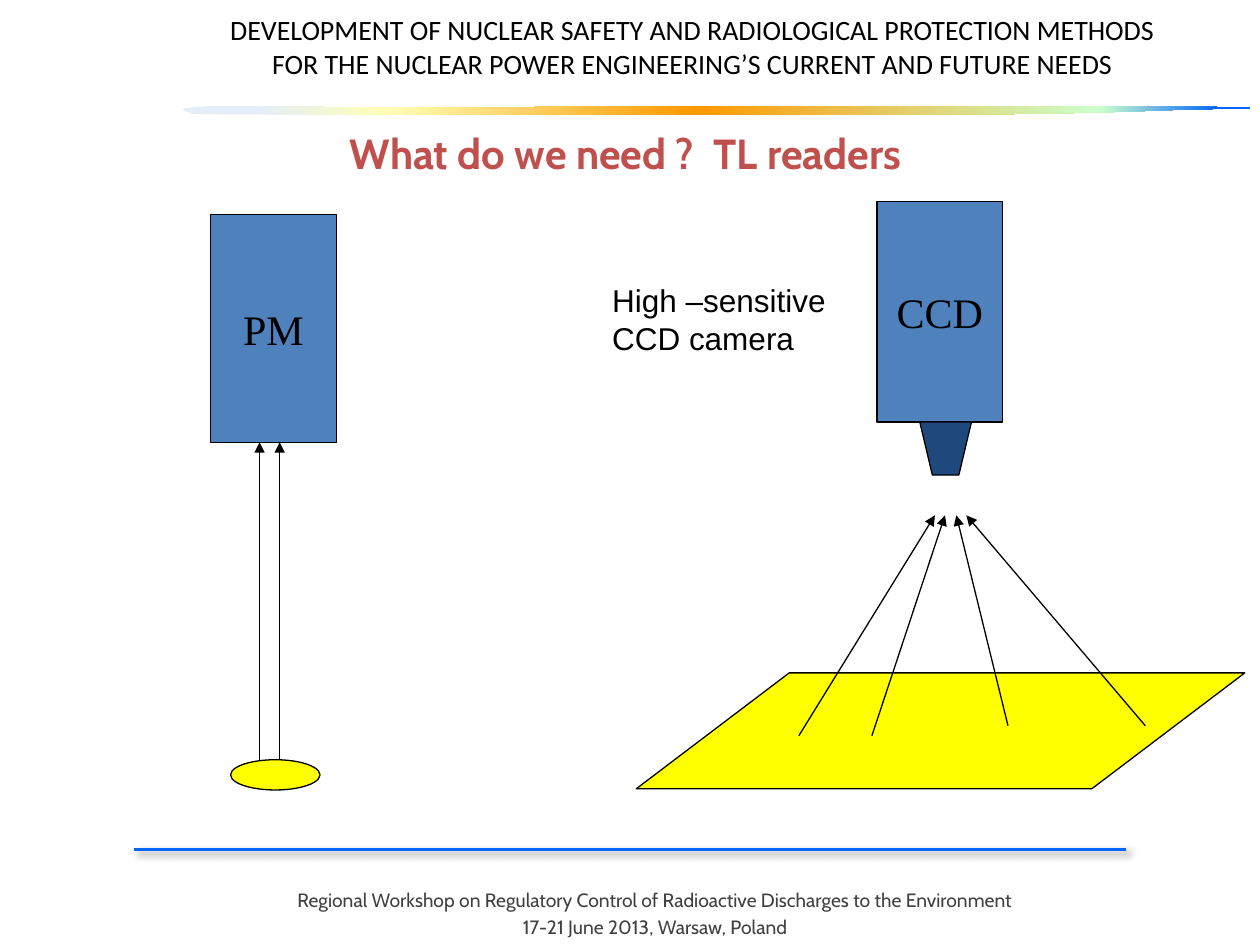
import dataclasses

import pptx
import pptx.dml.color
import pptx.enum.shapes
import pptx.enum.text
import pptx.oxml
import pptx.oxml.ns
import pptx.util
from lxml import etree

Inches = pptx.util.Inches
Pt = pptx.util.Pt
SHAPE = pptx.enum.shapes.MSO_SHAPE
ALIGN = pptx.enum.text.PP_ALIGN
ANCHOR = pptx.enum.text.MSO_ANCHOR
qn = pptx.oxml.ns.qn


@dataclasses.dataclass(frozen=True)
class Theme:
    black: str = "000000"
    yellow: str = "FFFF00"
    body: str = "4F81BD"
    lens: str = "1F497D"
    title: str = "C0504D"
    foot: str = "404040"
    rule: str = "0066FF"
    band: tuple = ((7, "E4EDF8"), (19, "FFFFB7"), (48, "FF9900"),
                   (86, "CCFFCC"), (97, "0066FF"))
    head_size: int = 16
    big_size: int = 24
    note_size: int = 18
    foot_size: int = 11
    thin: float = 0.75
    thick: float = 1.5


THEME = Theme()

# Each curve is two controls and an end; a lone point is a straight line.
SWOOSH_START = (9.4, 0.87)
SWOOSH = [
    ((9.78, 0.86), (10.12, 0.86), (9.78, 0.85)),
    ((8.45, 0.84), (5.47, 0.84), (4.12, 0.85)),
    ((2.78, 0.85),),
    ((2.4, 0.85), (1.89, 0.84), (1.7, 0.84)),
    ((1.34, 0.86), (1.46, 0.87), (1.51, 0.9)),
    ((1.44, 0.91), (2.54, 0.91), (3.55, 0.91)),
    ((4.54, 0.9), (6.69, 0.92), (7.5, 0.91)),
    ((8.83, 0.9), (9.02, 0.88), (9.4, 0.87)),
]


def color(code):
    return pptx.dml.color.RGBColor.from_string(code)


def paint(shape, fill):
    shape.shadow.inherit = False
    shape.fill.solid()
    shape.fill.fore_color.rgb = color(fill)
    shape.line.color.rgb = color(THEME.black)
    shape.line.width = Pt(THEME.thin)


def write(frame, lines, size, font, ink, align=ALIGN.CENTER, bold=False, gap=0):
    frame.text = "\n".join(lines)
    for i, para in enumerate(frame.paragraphs):
        para.alignment = align
        para.space_before = Pt(gap if i else 0)
        para.font.size = Pt(size)
        para.font.name = font
        para.font.bold = bold
        para.font.color.rgb = color(ink)


def add_text(slide, box, lines, *style, wrap=True, **more):
    shape = slide.shapes.add_textbox(*map(Inches, box))
    shape.text_frame.word_wrap = wrap
    write(shape.text_frame, lines, *style, **more)


def add_block(slide, kind, box, fill, label=None):
    shape = slide.shapes.add_shape(kind, *map(Inches, box))
    paint(shape, fill)
    if label:
        frame = shape.text_frame
        frame.word_wrap = False
        frame.vertical_anchor = ANCHOR.MIDDLE
        write(frame, [label], THEME.big_size, "Times New Roman", THEME.black)
    return shape


def add_path(slide, points):
    spots = [(Inches(x), Inches(y)) for x, y in points]
    pen = slide.shapes.build_freeform(*spots[0])
    pen.add_line_segments(spots[1:], close=True)
    return pen.convert_to_shape()


def add_line(slide, start, end, ink, width):
    line = slide.shapes.add_connector(
        pptx.enum.shapes.MSO_CONNECTOR.STRAIGHT, *map(Inches, start + end))
    line.line.color.rgb = color(ink)
    line.line.width = Pt(width)
    effect = etree.SubElement(line._element.spPr, qn("a:effectLst"))
    return line, effect


def add_arrow(slide, start, tip):
    line, _ = add_line(slide, start, tip, THEME.black, THEME.thin)
    etree.SubElement(line.line._get_or_add_ln(), qn("a:tailEnd"), type="triangle")


def add_rule(slide):
    _, effect = add_line(slide, (1.06, 6.74), (8.94, 6.74), THEME.rule, THEME.thick)
    shade = etree.SubElement(effect, qn("a:outerShdw"), blurRad=str(Pt(4)),
                             dist=str(Pt(3)), dir=str(45 * 60000))
    ink = etree.SubElement(shade, qn("a:srgbClr"), val=THEME.black)
    etree.SubElement(ink, qn("a:alpha"), val="40000")


def trace(start, parts, steps=12):
    """Turn lines and cubic curves into a list of points."""
    points = [start]
    for part in parts:
        if len(part) == 1:
            points.append(part[0])
            continue
        knots = (points[-1],) + part
        for i in range(1, steps + 1):
            t = i / steps
            u = 1 - t
            share = (u**3, 3 * u * u * t, 3 * u * t * t, t**3)
            points.append(tuple(sum(s * k[axis] for s, k in zip(share, knots))
                                for axis in (0, 1)))
    return points


def add_swoosh(slide):
    shape = add_path(slide, trace(SWOOSH_START, SWOOSH))
    shape.shadow.inherit = False
    shape.line.fill.background()
    shape.fill.gradient()
    shape.fill.gradient_angle = 0
    stops = shape._element.spPr.find(qn("a:gradFill")).find(qn("a:gsLst"))
    for stop in list(stops):
        stops.remove(stop)
    for place, code in THEME.band:
        stop = etree.SubElement(stops, qn("a:gs"), pos=str(place * 1000))
        etree.SubElement(stop, qn("a:srgbClr"), val=code)


def add_frame(slide):
    """Draw the header, the footer and their rules."""
    add_rule(slide)
    add_swoosh(slide)
    add_text(slide, (1.38, 7, 7.64, 0.45),
             ["Regional Workshop on Regulatory Control of Radioactive Discharges to the Environment",
              "17-21 June 2013, Warsaw, Poland"],
             THEME.foot_size, "Cabin", THEME.foot, gap=2.2)
    add_text(slide, (0.82, 0.05, 9.35, 0.64),
             ["DEVELOPMENT OF NUCLEAR SAFETY AND RADIOLOGICAL PROTECTION METHODS",
              "FOR THE NUCLEAR POWER ENGINEERING’S CURRENT AND FUTURE NEEDS"],
             THEME.head_size, "Calibri", THEME.black)
    add_text(slide, (0.09, 0.96, 9.75, 0.5), ["What do we need ?  TL readers"],
             THEME.big_size, "Cabin", THEME.title, bold=True)


def add_camera(slide):
    sheet = add_block(slide, SHAPE.PARALLELOGRAM, (5.05, 5.34, 4.83, 0.92), THEME.yellow)
    sheet.adjustments[0] = 1.32
    add_block(slide, SHAPE.RECTANGLE, (6.96, 1.6, 1, 1.75), THEME.body, "CCD")
    lens = add_path(slide, [(7.3, 3.35), (7.4, 3.77), (7.61, 3.77), (7.71, 3.35)])
    paint(lens, THEME.lens)
    rays = [((6.34, 5.84), 7.42), ((6.92, 5.84), 7.5),
            ((8, 5.76), 7.59), ((9.09, 5.76), 7.67)]
    for start, tip in rays:
        add_arrow(slide, start, (tip, 4.09))
    add_text(slide, (4.76, 2.18, 1.9, 0.7), ["High –sensitive", "CCD camera"],
             THEME.note_size, "Arial", THEME.black, align=ALIGN.LEFT, wrap=False)


def add_tube(slide):
    add_block(slide, SHAPE.RECTANGLE, (1.67, 1.7, 1, 1.81), THEME.body, "PM")
    add_block(slide, SHAPE.OVAL, (1.83, 6.03, 0.71, 0.24), THEME.yellow)
    for x in (2.06, 2.22):
        add_arrow(slide, (x, 6.03), (x, 3.51))


def main():
    deck = pptx.Presentation()
    deck.slide_width, deck.slide_height = Inches(10), Inches(7.5)
    slide = deck.slides.add_slide(deck.slide_layouts[6])
    add_frame(slide)
    add_camera(slide)
    add_tube(slide)
    deck.save("out.pptx")


if __name__ == "__main__":
    main()
